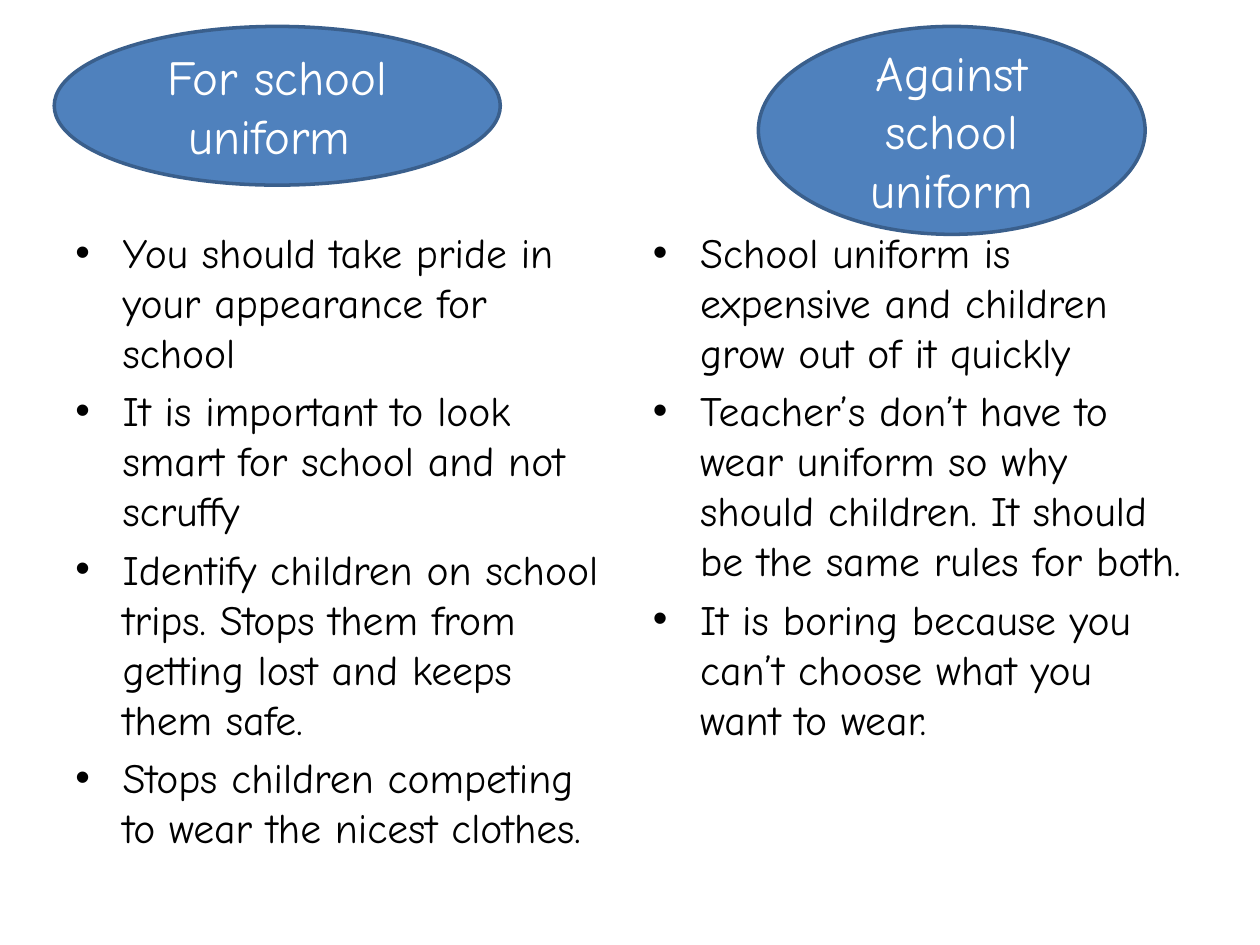
import pptx
import pptx.util
import pptx.dml.color
import pptx.enum.shapes
import pptx.enum.text
from dataclasses import dataclass
from lxml import etree

Pt = pptx.util.Pt
RGB = pptx.dml.color.RGBColor.from_string


@dataclass(frozen=True)
class Theme:
    font: str = "Comic Neue"
    heading_size: float = 28
    point_size: float = 23.8
    text: str = "000000"
    heading_text: str = "FFFFFF"
    oval: str = "4F81BD"
    oval_edge: str = "3A5F8C"


theme = Theme()
INDENT = 27
POINTS_TOP, POINTS_WIDTH, POINTS_HEIGHT = 126, 318, 356.4
HEADING_TOP = 15.1

# Heading, its (left, width, height), left edge of the points, the points
sides = [
    ("For school uniform ", (31, 254.9, 90.7), 36, [
        "You should take pride in your appearance for school",
        "It is important to look smart for school and not scruffy",
        "Identify children on school trips. Stops them from getting lost and keeps them safe.",
        "Stops children competing to wear the nicest clothes.",
    ]),
    ("Against school uniform", (433.4, 221, 118.8), 366, [
        "School uniform is expensive and children grow out of it quickly",
        "Teacher’s don’t have to wear uniform so why should children. "
        "It should be the same rules for both.",
        "It is boring because you can’t choose what you want to wear.",
    ]),
]


def write(paragraph, text, size, color, **layout):
    run = paragraph.add_run()
    run.text = text
    for name, value in {"name": theme.font, "size": Pt(size)}.items():
        setattr(run.font, name, value)
    run.font.color.rgb = RGB(color)
    for name, value in layout.items():
        setattr(paragraph, name, value)


def add_bullet(paragraph):
    properties = paragraph._p.get_or_add_pPr()
    properties.set("marL", str(Pt(INDENT)))
    properties.set("indent", str(-Pt(INDENT)))
    for tag, key, value in (("buFont", "typeface", "Arial"), ("buChar", "char", "•")):
        etree.SubElement(properties, pptx.oxml.ns.qn(f"a:{tag}")).set(key, value)


deck = pptx.Presentation()
deck.slide_width, deck.slide_height = Pt(720), Pt(540)
slide = deck.slides.add_slide(deck.slide_layouts[6])

for heading, (left, width, height), points_left, points in sides:
    argument = slide.shapes.add_textbox(
        Pt(points_left), Pt(POINTS_TOP), Pt(POINTS_WIDTH), Pt(POINTS_HEIGHT)).text_frame
    argument.word_wrap = True
    for number, point in enumerate(points):
        paragraph = argument.add_paragraph() if number else argument.paragraphs[0]
        write(paragraph, point, theme.point_size, theme.text,
              space_before=Pt(theme.point_size * 0.2))
        add_bullet(paragraph)

    oval = slide.shapes.add_shape(
        pptx.enum.shapes.MSO_SHAPE.OVAL, Pt(left), Pt(HEADING_TOP), Pt(width), Pt(height))
    oval.shadow.inherit = False
    oval.fill.solid()
    oval.fill.fore_color.rgb = RGB(theme.oval)
    oval.line.color.rgb = RGB(theme.oval_edge)
    oval.line.width = Pt(2)
    oval.text_frame.word_wrap = True
    oval.text_frame.vertical_anchor = pptx.enum.text.MSO_ANCHOR.MIDDLE
    write(oval.text_frame.paragraphs[0], heading, theme.heading_size, theme.heading_text,
          alignment=pptx.enum.text.PP_ALIGN.CENTER)

deck.save("out.pptx")
